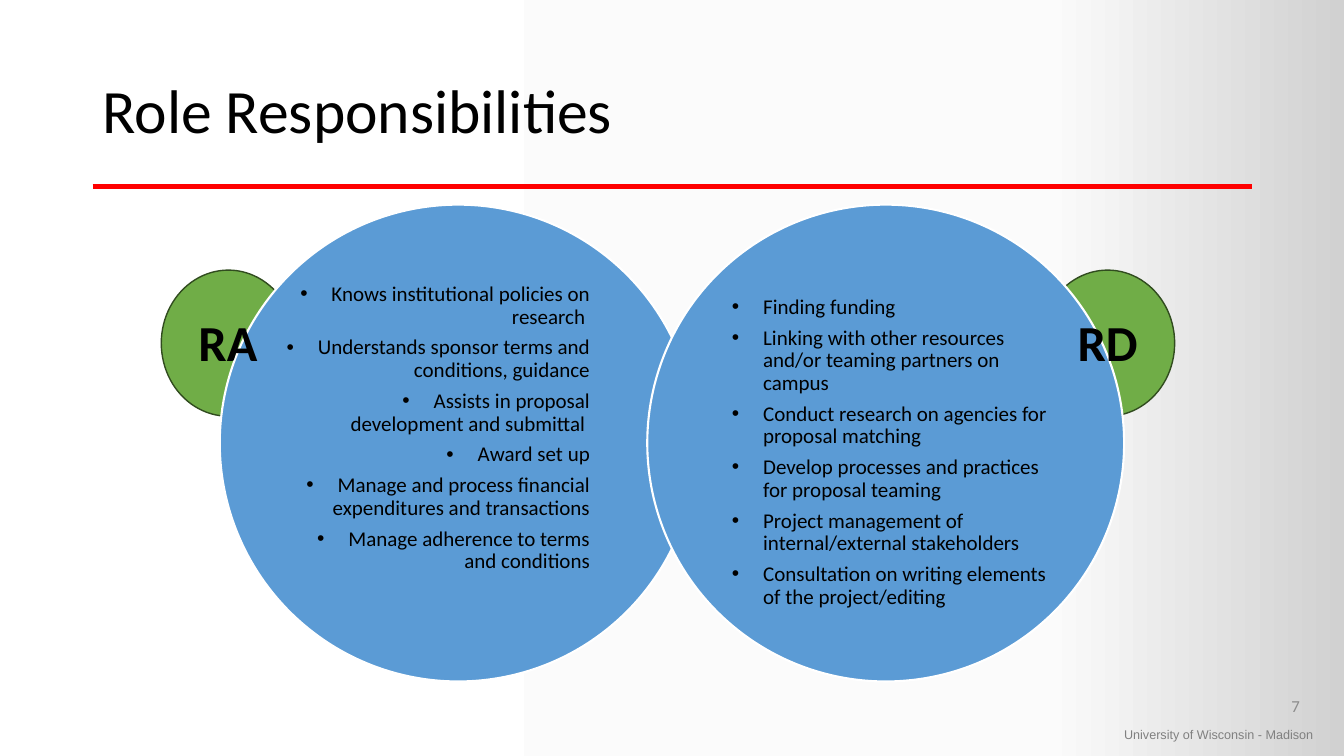
from copy import deepcopy
from pptx import Presentation
from pptx.dml.color import RGBColor
from pptx.enum.shapes import MSO_CONNECTOR, MSO_SHAPE
from pptx.enum.text import MSO_ANCHOR, PP_ALIGN
from pptx.oxml.ns import qn
from pptx.util import Inches, Pt
from lxml.etree import SubElement

BLACK = RGBColor(0x00, 0x00, 0x00)
WHITE = RGBColor(0xFF, 0xFF, 0xFF)
RED = RGBColor(0xFF, 0x00, 0x00)
BLUE = RGBColor(0x5B, 0x9B, 0xD5)
GREEN = RGBColor(0x70, 0xAD, 0x47)
DARK_GREEN = RGBColor(0x31, 0x4C, 0x1F)
FOOTER_GRAY = RGBColor(0x80, 0x80, 0x80)
NUMBER_GRAY = RGBColor(0x8C, 0x8C, 0x8C)
BACKGROUND = [
    (0, WHITE),
    (0.78, RGBColor(0xFB, 0xFB, 0xFB)),
    (1, RGBColor(0xD1, 0xD1, 0xD1)),
]
LEFT, RIGHT = PP_ALIGN.LEFT, PP_ALIGN.RIGHT
INDENT = Inches(0.31)

deck = Presentation()
deck.slide_width, deck.slide_height = Inches(13.33), Inches(7.5)
column, row = deck.slide_width / 100, deck.slide_height / 100
page = deck.slides.add_slide(deck.slide_layouts[6])


def add_circle(left, top, width, height, fill, line, weight):
    circle = page.shapes.add_shape(
        MSO_SHAPE.OVAL, int(left * column), int(top * row), int(width * column), int(height * row))
    circle.shadow.inherit = False
    circle.fill.solid()
    circle.fill.fore_color.rgb = fill
    circle.line.color.rgb = line
    circle.line.width = Pt(weight)


def add_text(left, top, width, height, text, size, color=BLACK, font="Calibri",
             bold=False, align=LEFT, anchor=MSO_ANCHOR.TOP):
    box = page.shapes.add_textbox(
        int(left * column), int(top * row), int(width * column), int(height * row))
    frame = box.text_frame
    frame.word_wrap = True
    frame.vertical_anchor = anchor
    frame.text = text
    for para in frame.paragraphs:
        para.alignment = align
        for span in para.runs:
            span.font.name, span.font.size = font, Pt(size)
            span.font.bold = bold
            span.font.color.rgb = color
    return frame


fill = page.background.fill
fill.gradient()
fill.gradient_angle = 0
stops = page.element.find(".//" + qn("a:gsLst"))
stops.append(deepcopy(stops[0]))
for stop, (position, color) in zip(fill.gradient_stops, BACKGROUND):
    stop.position = position
    stop.color.rgb = color

add_text(82.9, 95.47, 17, 3.33, "University of Wisconsin - Madison", 9, FOOTER_GRAY, "Arial")

rule = page.shapes.add_connector(
    MSO_CONNECTOR.STRAIGHT, int(6.9 * column), int(24.67 * row), int(93.17 * column), int(24.67 * row))
rule.line.color.rgb = RED
rule.line.width = Pt(3)
SubElement(rule.element.spPr, qn("a:effectLst"))

for left in (77.42, 12):
    add_circle(left, 35.73, 9.98, 19.33, GREEN, DARK_GREEN, 1)

title = add_text(6.9, 5.33, 86.27, 19.33, "Role Responsibilities", 44, anchor=MSO_ANCHOR.MIDDLE)
title.paragraphs[0].line_spacing = 0.9
add_text(74.94, 90.67, 22.51, 5.33, "7", 12, NUMBER_GRAY, align=RIGHT, anchor=MSO_ANCHOR.MIDDLE)

roles = [
    (16.35, (21.31, 32.53, 22.58, 48.27), RIGHT, [
        "Knows institutional policies on research ",
        "Understands sponsor terms and conditions, guidance",
        "Assists in proposal development and submittal ",
        "Award set up",
        "Manage and process financial expenditures and transactions",
        "Manage adherence to terms and conditions",
    ]),
    (48.16, (54.46, 35.73, 24.23, 48.27), LEFT, [
        "Finding funding",
        "Linking with other resources and/or teaming partners on campus",
        "Conduct research on agencies for proposal matching",
        "Develop processes and practices for proposal teaming",
        "Project management of internal/external stakeholders",
        "Consultation on writing elements of the project/editing",
    ]),
]
for circle_left, area, align, duties in roles:
    add_circle(circle_left, 27.07, 35.48, 63.07, BLUE, WHITE, 1.5)
    frame = add_text(*area, "\n".join(duties), 15, align=align, anchor=MSO_ANCHOR.MIDDLE)
    frame.margin_left = frame.margin_right = frame.margin_top = frame.margin_bottom = 0
    for para in frame.paragraphs:
        para.line_spacing = 0.9
        para.space_after = Pt(5.75)
        settings = para._p.get_or_add_pPr()
        settings.set("marL", str(INDENT))
        settings.set("indent", str(-INDENT))
        SubElement(settings, qn("a:buFont"), typeface="Arial")
        SubElement(settings, qn("a:buChar"), char="•")

for left, label in ((14.03, "RA"), (79.44, "RD")):
    add_text(left, 40.53, 6.68, 9.47, label, 36, bold=True)

deck.save("out.pptx")
